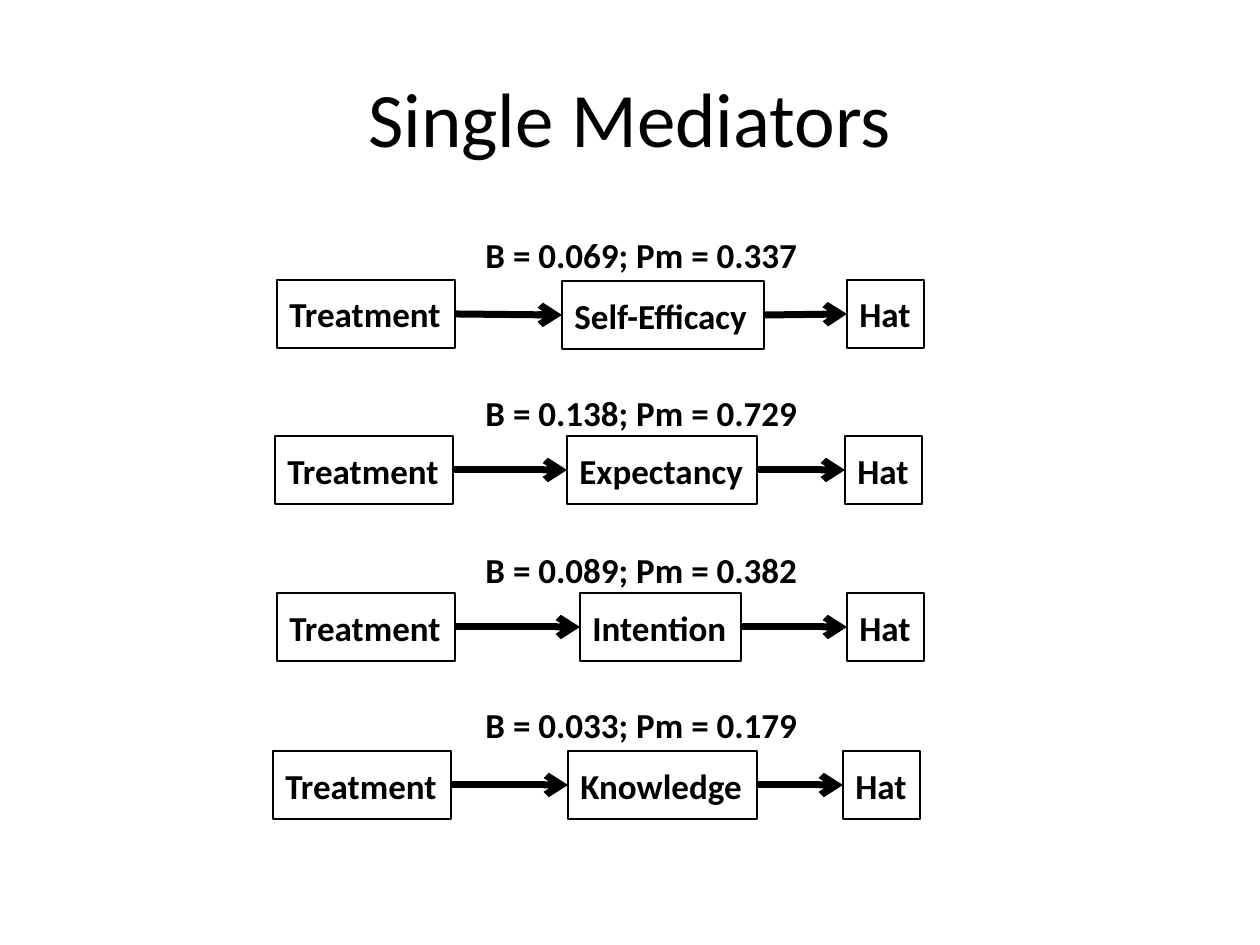
from lxml.etree import SubElement
from pptx import Presentation
from pptx.dml.color import RGBColor as RGB
from pptx.enum.shapes import MSO_CONNECTOR as LINK, MSO_SHAPE as KIND
from pptx.enum.text import MSO_ANCHOR as ANCHOR, MSO_AUTO_SIZE as FIT, PP_ALIGN as ALIGN
from pptx.oxml.ns import qn
from pptx.util import Inches, Pt

# Content: note, note top, mediator, its left, top and width, row left, row top
TITLE = "Single Mediators"
CAUSE, EFFECT = "Treatment", "Hat"
ROWS = [
    ("B = 0.069; Pm = 0.337", 220, "Self-Efficacy", 562, 281, 202, 277, 280),
    ("B = 0.138; Pm = 0.729", 378, "Expectancy", 567, 436, 190, 275, 436),
    ("B = 0.089; Pm = 0.382", 535, "Intention", 580, 593, 161, 277, 593),
    ("B = 0.033; Pm = 0.179", 690, "Knowledge", 568, 751, 189, 273, 751),
]

# Format
COLORS = {"ink": "000000", "page": "FFFFFF"}
INK = RGB.from_string(COLORS["ink"])
SCALE = Inches(1) / 126
HIGH, CAUSE_W, EFFECT_W, EFFECT_DX = 68, 178, 77, 570
NOTE_X, NOTE_W = 404, 475
LEFT_SITE, RIGHT_SITE = 1, 3
PAD = Inches(0.1)
FRAME = {"margin_left": PAD, "margin_right": PAD, "margin_top": PAD,
         "margin_bottom": PAD, "vertical_anchor": ANCHOR.MIDDLE,
         "auto_size": FIT.SHAPE_TO_FIT_TEXT}
BOLD = {"name": "Calibri", "size": Pt(20), "bold": True}
HEAD = {"name": "Calibri", "size": Pt(44), "bold": False}


def px(*nums):
    return [round(n * SCALE) for n in nums]


def style(item, form):
    for key, val in form.items():
        setattr(item, key, val)


def write(shape, text, font, align):
    shape.text_frame.text = text
    para = shape.text_frame.paragraphs[0]
    para.alignment = align
    run = para.runs[0]
    style(run.font, font)
    run.font.color.rgb = INK


def add_box(slide, text, *place):
    box = slide.shapes.add_shape(KIND.RECTANGLE, *px(*place, HIGH))
    box.shadow.inherit = False
    box.fill.background()
    box.line.color.rgb = INK
    box.line.width = Pt(1)
    style(box.text_frame, {**FRAME, "word_wrap": False})
    write(box, text, BOLD, ALIGN.LEFT)
    return box


def add_note(slide, text, top):
    note = slide.shapes.add_textbox(*px(NOTE_X, top, NOTE_W, HIGH))
    style(note.text_frame, {**FRAME, "word_wrap": True})
    write(note, text, BOLD, ALIGN.CENTER)


def add_arrow(slide, start, end):
    arrow = slide.shapes.add_connector(LINK.STRAIGHT, 0, 0, 0, 0)
    arrow.begin_connect(start, RIGHT_SITE)
    arrow.end_connect(end, LEFT_SITE)
    arrow.line.color.rgb = INK
    arrow.line.width = Pt(4)
    SubElement(arrow.line._get_or_add_ln(), qn("a:tailEnd"), type="arrow")
    SubElement(arrow._element.spPr, qn("a:effectLst"))


def main():
    deck = Presentation()
    deck.slide_width, deck.slide_height = Inches(10), Inches(7.5)
    slide = deck.slides.add_slide(deck.slide_layouts[5])
    slide.background.fill.solid()
    slide.background.fill.fore_color.rgb = RGB.from_string(COLORS["page"])

    # Title
    title = slide.shapes.title
    style(title, dict(zip(("left", "top", "width", "height"), px(63, 38, 1134, 157))))
    title.text_frame.vertical_anchor = ANCHOR.MIDDLE
    write(title, TITLE, HEAD, ALIGN.CENTER)

    # One chain of cause, mediator and effect per row
    for note, note_y, name, mid_x, mid_y, mid_w, left, top in ROWS:
        cause = add_box(slide, CAUSE, left, top, CAUSE_W)
        middle = add_box(slide, name, mid_x, mid_y, mid_w)
        effect = add_box(slide, EFFECT, left + EFFECT_DX, top, EFFECT_W)
        add_arrow(slide, cause, middle)
        add_arrow(slide, middle, effect)
        add_note(slide, note, note_y)

    deck.save("out.pptx")


if __name__ == "__main__":
    main()
